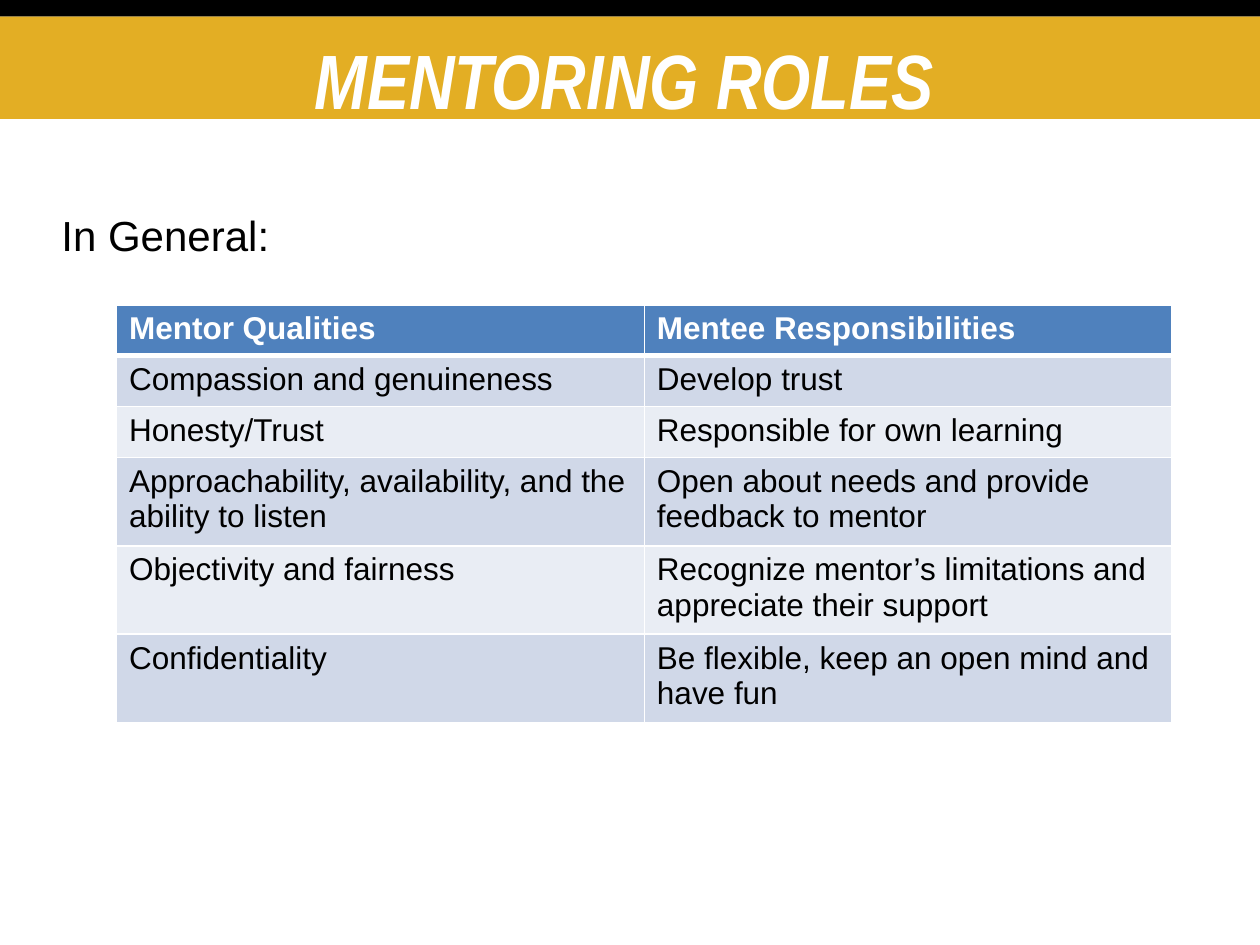
from lxml.etree import SubElement
from pptx import Presentation
from pptx.dml.color import RGBColor
from pptx.enum.shapes import MSO_SHAPE
from pptx.enum.text import MSO_ANCHOR, PP_ALIGN
from pptx.oxml.ns import qn
from pptx.util import Cm, Pt

WHITE = RGBColor(0xFF, 0xFF, 0xFF)
BLACK = RGBColor(0x00, 0x00, 0x00)
GOLD = RGBColor(0xE3, 0xAE, 0x24)
BLUE = RGBColor(0x4F, 0x81, 0xBD)
BAND_DARK = RGBColor(0xD0, 0xD8, 0xE8)
BAND_LIGHT = RGBColor(0xE9, 0xED, 0xF4)

BANDS = [
    (0, 0.33, 25.4, 2.07, GOLD),
    (0, 0, 25.4, 0.33, BLACK),
]
TITLE_FONT = dict(name="Arial Narrow", size=Pt(44), bold=True, italic=True)
INTRO_FONT = dict(name="Arial", size=Pt(24))
HEADER_FONT = dict(name="Arial", size=Pt(18), bold=True)
CELL_FONT = dict(name="Arial", size=Pt(18), bold=False)
TEXTS = [
    ("MENTORING ROLES", (1.02, 0.48, 23.14, 2.08), TITLE_FONT, WHITE,
     PP_ALIGN.CENTER, dict(vertical_anchor=MSO_ANCHOR.BOTTOM, margin_bottom=Cm(0.05))),
    ("In General:", (0.99, 4.09, 24.41, 12.4), INTRO_FONT, BLACK,
     PP_ALIGN.LEFT, dict(vertical_anchor=MSO_ANCHOR.TOP)),
]
ROWS = [
    ("Mentor Qualities", "Mentee Responsibilities"),
    ("Compassion and genuineness", "Develop trust"),
    ("Honesty/Trust", "Responsible for own learning"),
    ("Approachability, availability, and the ability to listen",
     "Open about needs and provide feedback to mentor"),
    ("Objectivity and fairness",
     "Recognize mentor’s limitations and appreciate their support"),
    ("Confidentiality", "Be flexible, keep an open mind and have fun"),
]
ROW_HEIGHTS = [0.95, 1.03, 1.03, 1.67, 1.67, 1.65]
COLUMN_WIDTH = 10.64
TABLE_LEFT, TABLE_TOP = 2.35, 6.15


def apply(target, values):
    for name, value in values.items():
        setattr(target, name, value)


def write(text_frame, text, font, color, alignment=PP_ALIGN.LEFT):
    paragraph = text_frame.paragraphs[0]
    paragraph.alignment = alignment
    run = paragraph.add_run()
    run.text = text
    apply(run.font, font)
    run.font.color.rgb = color


def set_borders(cell, widths):
    properties = cell._tc.get_or_add_tcPr()
    for position, (side, width) in enumerate(widths.items()):
        line = properties.makeelement(qn(f"a:ln{side}"), {"w": str(Pt(width))})
        fill = SubElement(line, qn("a:solidFill"))
        SubElement(fill, qn("a:srgbClr"), val=str(WHITE))
        properties.insert(position, line)


def add_table(slide):
    table = slide.shapes.add_table(
        len(ROWS), len(ROWS[0]), Cm(TABLE_LEFT), Cm(TABLE_TOP),
        Cm(COLUMN_WIDTH * len(ROWS[0])), Cm(sum(ROW_HEIGHTS))).table
    for column in table.columns:
        column.width = Cm(COLUMN_WIDTH)
    for index, (texts, height) in enumerate(zip(ROWS, ROW_HEIGHTS)):
        table.rows[index].height = Cm(height)
        if index == 0:
            fill, font, color = BLUE, HEADER_FONT, WHITE
        else:
            fill = BAND_DARK if index % 2 else BAND_LIGHT
            font, color = CELL_FONT, BLACK
        top = 3 if index == 1 else 1
        bottom = 3 if index == 0 else 1
        for cell, text in zip(table.rows[index].cells, texts):
            write(cell.text_frame, text, font, color)
            cell.fill.solid()
            cell.fill.fore_color.rgb = fill
            set_borders(cell, dict(L=1, R=1, T=top, B=bottom))


def main():
    presentation = Presentation()
    presentation.slide_width, presentation.slide_height = Cm(25.4), Cm(19.05)
    slide = presentation.slides.add_slide(presentation.slide_layouts[6])
    for *place, color in BANDS:
        band = slide.shapes.add_shape(MSO_SHAPE.RECTANGLE, *map(Cm, place))
        band.shadow.inherit = False
        band.fill.solid()
        band.fill.fore_color.rgb = color
        band.line.fill.background()
    for text, place, font, color, alignment, frame_format in TEXTS:
        text_frame = slide.shapes.add_textbox(*map(Cm, place)).text_frame
        text_frame.word_wrap = True
        apply(text_frame, frame_format)
        write(text_frame, text, font, color, alignment)
    add_table(slide)
    presentation.save("out.pptx")


if __name__ == "__main__":
    main()
